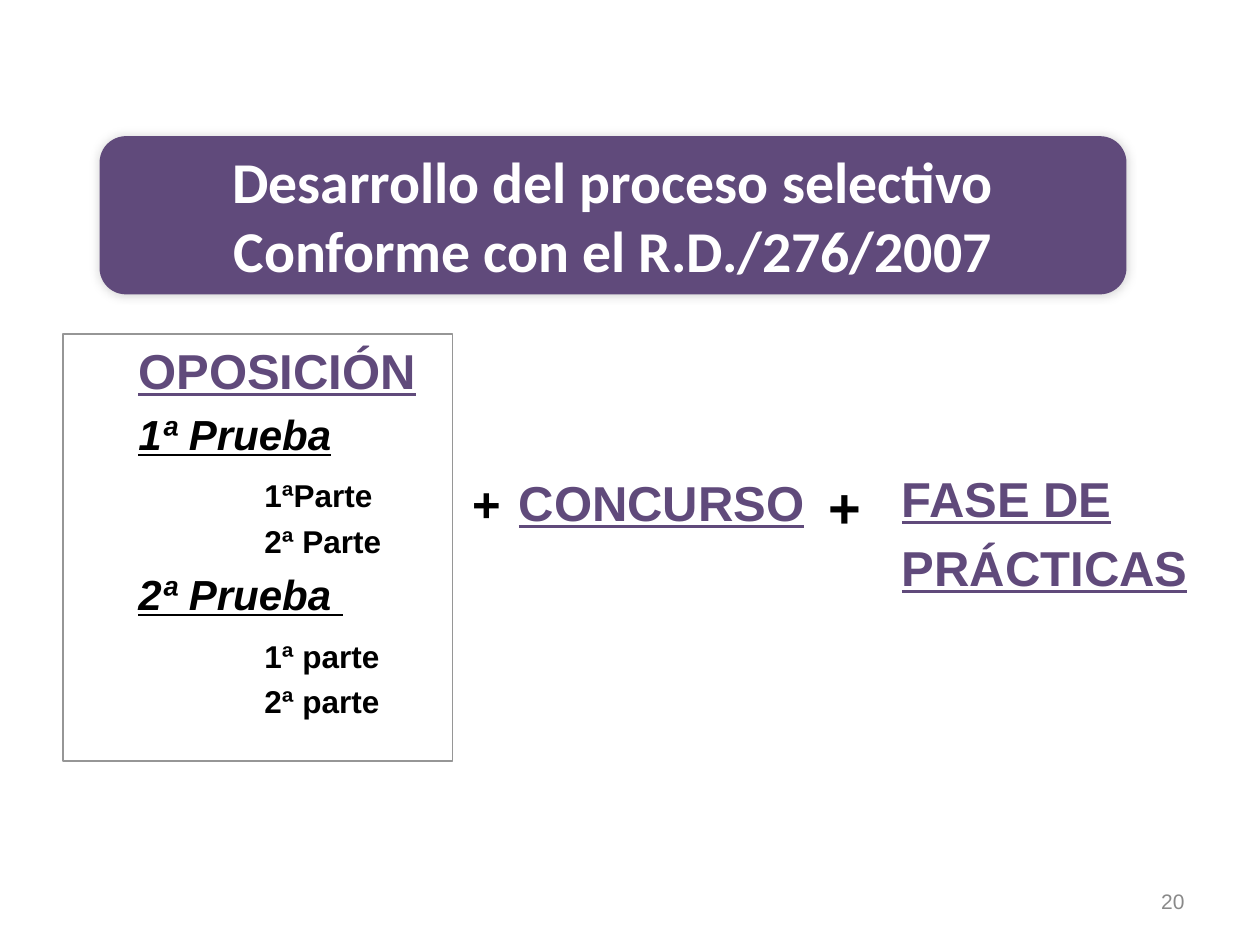
from lxml import etree
from pptx import Presentation
from pptx.dml.color import RGBColor
from pptx.enum import shapes, text
from pptx.oxml import ns
from pptx.util import Pt

PURPLE, BLACK, WHITE, GREY = "604A7B", "000000", "FFFFFF", "898989"

# Content
BANNER = ["Desarrollo del proceso selectivo", "Conforme con el R.D./276/2007"]
BANNER_BOX = (56.9, 77.8, 586.8, 90.4)

HEADING = dict(size=28, bold=True, underline=True, color=PURPLE)
PRUEBA = dict(size=24, bold=True, italic=True, underline=True)
PARTE = dict(size=18, bold=True)
PLUS = dict(size=28, bold=True)

# Each line: words, font, left indent, space before
OPOSICION = [
    ("OPOSICIÓN", HEADING, 36, 0),
    ("1ª Prueba", PRUEBA, 36, 5.5),
    ("1ªParte", PARTE, 108, 10),
    ("2ª Parte", PARTE, 108, 4.5),
    ("2ª Prueba ", PRUEBA, 36, 5),
    ("1ª parte", PARTE, 108, 10),
    ("2ª parte", PARTE, 108, 4.5),
]
PHASES = [
    ((36, 190.8, 222.5, 244.1), OPOSICION),
    ((226.8, 267.1, 62.6, 56.9), [("+", PLUS, 36, 0)]),
    ((289.4, 266.4, 223.9, 46.1), [("CONCURSO", HEADING, 0, 0)]),
    ((466.6, 266.4, 30.2, 39.6), [("+", PLUS | dict(size=32), 0, 0)]),
    ((508.3, 264.2, 182.9, 93.6), [("FASE DE", HEADING, 0, 0),
                                   ("PRÁCTICAS", HEADING, 0, 5.6)]),
]
PAGE_NUMBER = [("20", dict(size=12, color=GREY), 0, 0)]


def rgb(value):
    return RGBColor.from_string(value)


def set_font(font, size, color=BLACK, name="Arial", **styles):
    font.color.rgb = rgb(color)
    for key, value in dict(size=Pt(size), name=name, **styles).items():
        setattr(font, key, value)


def write_lines(frame, lines):
    for i, (words, font, indent, before) in enumerate(lines):
        paragraph = frame.paragraphs[0] if i == 0 else frame.add_paragraph()
        run = paragraph.add_run()
        run.text = words
        set_font(run.font, **font)
        if indent:
            paragraph._p.get_or_add_pPr().set("marL", str(Pt(indent)))
        if before:
            paragraph.space_before = Pt(before)


def add_text(slide, box, lines):
    label = slide.shapes.add_textbox(*map(Pt, box))
    label.text_frame.word_wrap = True
    write_lines(label.text_frame, lines)
    return label


def add_banner(slide):
    # Rounded panel with a soft shadow, behind the title
    title = slide.shapes.title
    panel = slide.shapes.add_shape(shapes.MSO_SHAPE.ROUNDED_RECTANGLE,
                                   *map(Pt, BANNER_BOX))
    panel.fill.solid()
    panel.fill.fore_color.rgb = rgb(PURPLE)
    panel.line.fill.background()
    panel.shadow.inherit = False
    effects = panel._element.spPr.find(ns.qn("a:effectLst"))
    shadow = etree.SubElement(effects, ns.qn("a:outerShdw"),
                              blurRad=str(Pt(6)), dist="0", dir="13500000")
    shade = etree.SubElement(shadow, ns.qn("a:srgbClr"), val=BLACK)
    etree.SubElement(shade, ns.qn("a:alpha"), val="20000")
    title._element.addprevious(panel._element)

    # Title text
    for key, value in zip(("left", "top", "width", "height"), BANNER_BOX):
        setattr(title, key, Pt(value))
    frame = title.text_frame
    frame.auto_size = text.MSO_AUTO_SIZE.NONE
    frame.vertical_anchor = text.MSO_ANCHOR.MIDDLE
    font = dict(size=33, bold=True, color=WHITE, name="Calibri")
    write_lines(frame, [(words, font, 0, 0) for words in BANNER])
    for paragraph in frame.paragraphs:
        paragraph.alignment = text.PP_ALIGN.CENTER


def main():
    deck = Presentation()
    deck.slide_width, deck.slide_height = Pt(720), Pt(540)
    slide = deck.slides.add_slide(deck.slide_layouts[5])
    add_banner(slide)

    # Phases joined by plus signs; only the first is framed
    phases = [add_text(slide, box, lines) for box, lines in PHASES]
    phases[0].line.color.rgb = rgb("969696")
    phases[0].line.width = Pt(0.75)

    # Page number
    number = add_text(slide, (516.2, 500.4, 167.8, 28.8), PAGE_NUMBER)
    number.text_frame.vertical_anchor = text.MSO_ANCHOR.MIDDLE
    number.text_frame.paragraphs[0].alignment = text.PP_ALIGN.RIGHT

    deck.save("out.pptx")


if __name__ == "__main__":
    main()
